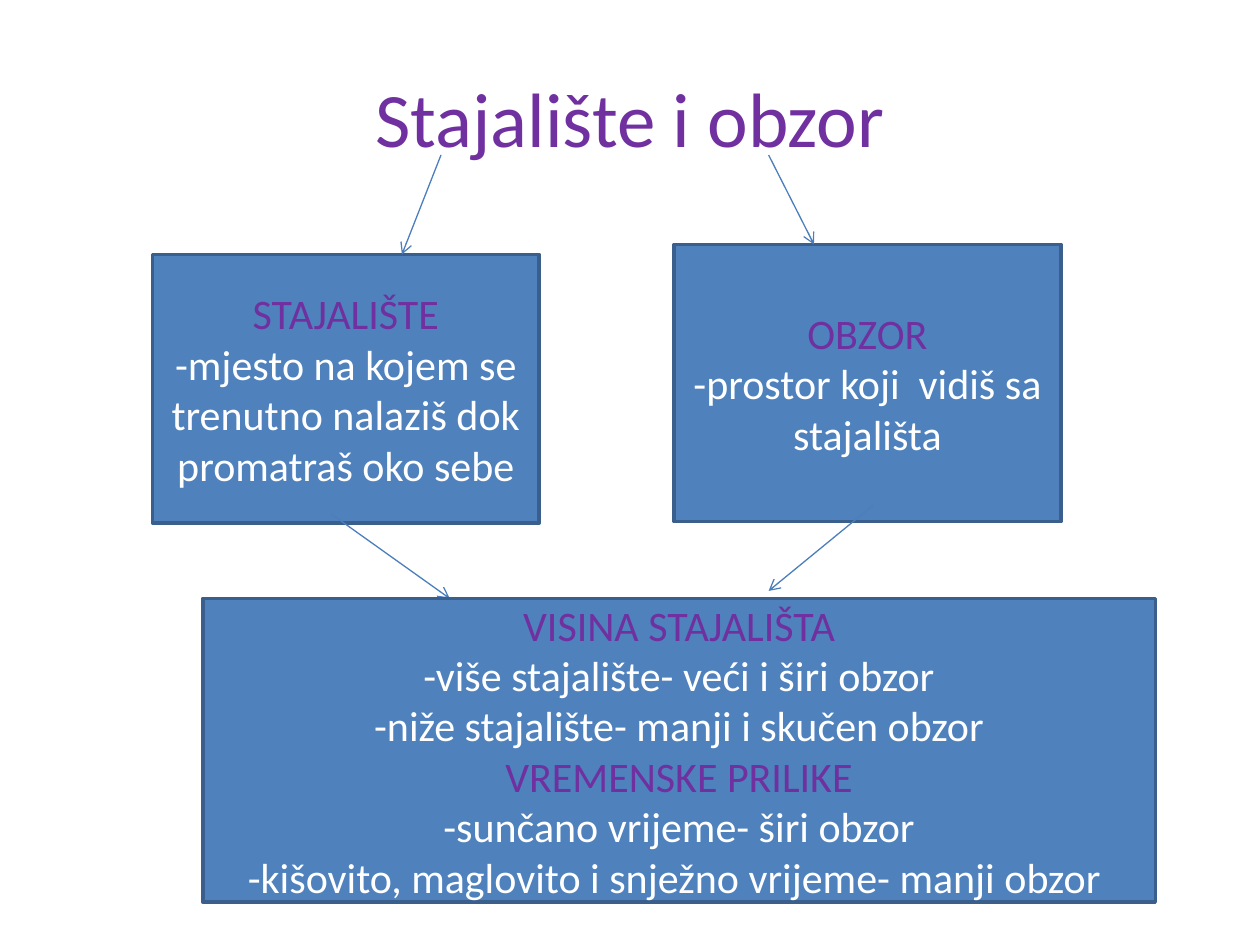
from lxml.etree import SubElement
from pptx import Presentation
from pptx.dml.color import RGBColor
from pptx.enum.shapes import MSO_CONNECTOR as CONN, MSO_SHAPE as SHAPE
from pptx.enum.text import MSO_ANCHOR as ANCHOR, PP_ALIGN as ALIGN
from pptx.oxml.ns import qn
from pptx.util import Inches, Pt

PURPLE, WHITE, BLUE, EDGE, ARROW = "7030A0", "FFFFFF", "4F81BD", "3A5F8C", "4B7EBC"

BOXES = [
    ((1.21, 2.02, 3.07, 2.13),
     ["STAJALIŠTE", "-mjesto na kojem se trenutno nalaziš dok promatraš oko sebe"]),
    ((5.35, 1.94, 3.07, 2.2),
     ["OBZOR", "-prostor koji  vidiš sa stajališta"]),
]
SUMMARY = (
    (1.61, 4.75, 7.56, 2.41),
    ["VISINA STAJALIŠTA",
     "-više stajalište- veći i širi obzor",
     "-niže stajalište- manji i skučen obzor",
     "VREMENSKE PRILIKE",
     "-sunčano vrijeme- širi obzor",
     "-kišovito, maglovito i snježno vrijeme- manji obzor "],
)
ARROWS = [
    (3.5, 1.23, 3.19, 2.02),
    (6.1, 1.23, 6.46, 1.94),
    (2.63, 4.08, 3.57, 4.75),
    (6.93, 4.01, 6.1, 4.69),
]


def rgb(color):
    """Turn a hex string into a colour."""
    return RGBColor.from_string(color)


def set_attrs(obj, values):
    """Set every attribute named in a dict."""
    for name, value in values.items():
        setattr(obj, name, value)


def set_line(line, color, width):
    """Give a line its colour and its width in points."""
    line.color.rgb = rgb(color)
    line.width = Pt(width)


def write_par(p, text, size, color):
    """Write one centred paragraph."""
    p.alignment = ALIGN.CENTER
    r = p.add_run()
    r.text = text
    set_attrs(r.font, {"name": "Calibri", "size": Pt(size)})
    r.font.color.rgb = rgb(color)


def add_title(s, text):
    """Fill and place the title placeholder."""
    sp = s.shapes.title
    places = (0.5, 0.3, 9, 1.25)
    set_attrs(sp, dict(zip(("left", "top", "width", "height"), map(Inches, places))))
    sp.text_frame.vertical_anchor = ANCHOR.MIDDLE
    write_par(sp.text_frame.paragraphs[0], text, 44, PURPLE)


def add_box(s, place, lines):
    """Add a blue box with purple headings and white points."""
    sp = s.shapes.add_shape(SHAPE.FLOWCHART_PROCESS, *map(Inches, place))
    sp.shadow.inherit = False
    sp.fill.solid()
    sp.fill.fore_color.rgb = rgb(BLUE)
    set_line(sp.line, EDGE, 2)
    tf = sp.text_frame
    set_attrs(tf, {"word_wrap": True, "vertical_anchor": ANCHOR.MIDDLE})
    for i, text in enumerate(lines):
        p = tf.add_paragraph() if i else tf.paragraphs[0]
        write_par(p, text, 24, WHITE if text.startswith("-") else PURPLE)


def add_arrow(s, ends):
    """Add a thin line with an open arrowhead at its end."""
    cxn = s.shapes.add_connector(CONN.STRAIGHT, *map(Inches, ends))
    set_line(cxn.line, ARROW, 0.75)
    SubElement(cxn.line._get_or_add_ln(), qn("a:tailEnd"), type="arrow")
    SubElement(cxn._element.spPr, qn("a:effectLst"))


def main():
    """Build the slide and save it."""
    prs = Presentation()
    set_attrs(prs, {"slide_width": Inches(10), "slide_height": Inches(7.5)})
    s = prs.slides.add_slide(prs.slide_layouts[5])
    add_title(s, "Stajalište i obzor")
    for place, lines in BOXES:
        add_box(s, place, lines)
    for ends in ARROWS:
        add_arrow(s, ends)
    add_box(s, *SUMMARY)
    prs.save("out.pptx")


if __name__ == "__main__":
    main()
